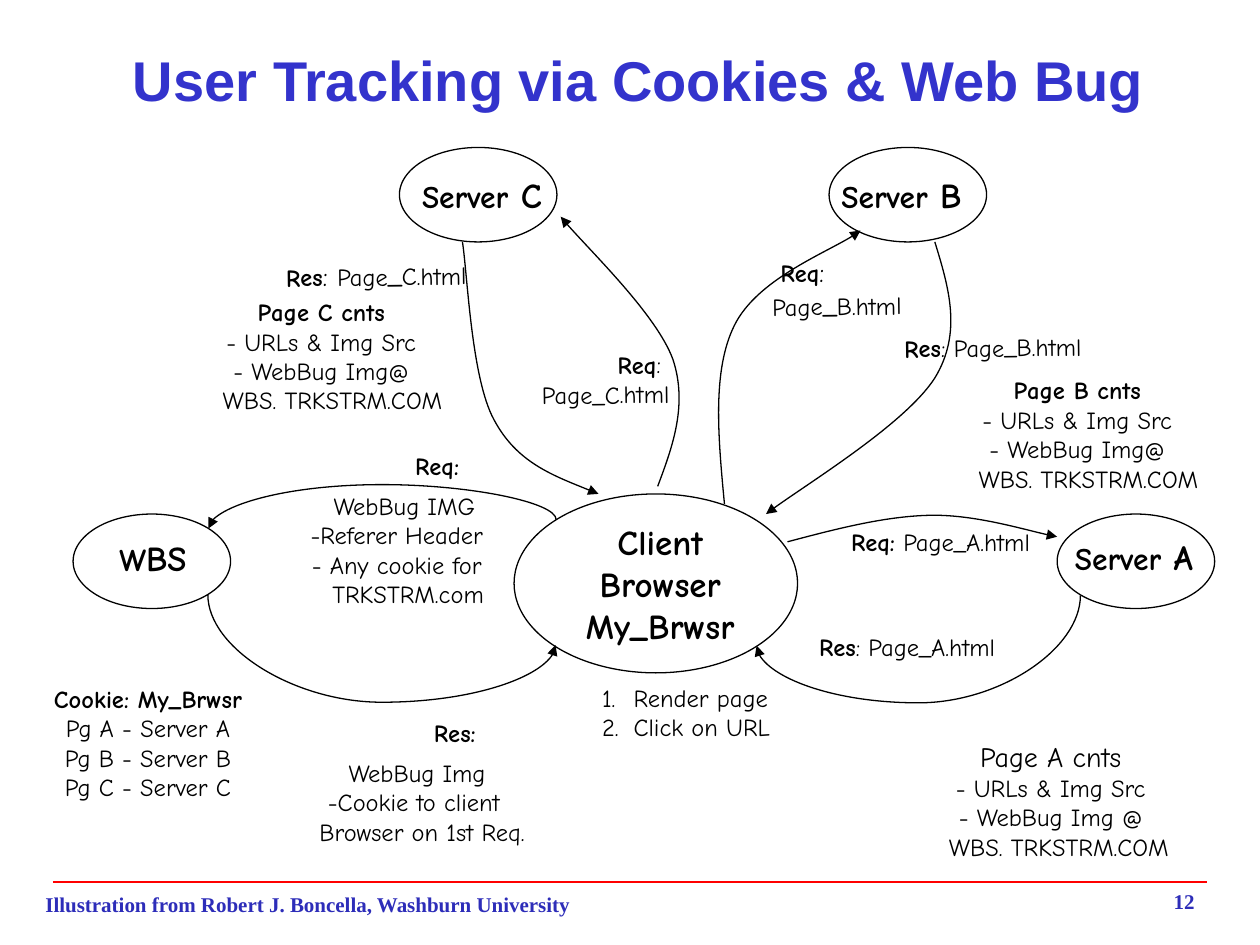
from lxml import etree
from pptx import Presentation
from pptx.dml.color import RGBColor
from pptx.enum.shapes import MSO_CONNECTOR, MSO_SHAPE
from pptx.enum.text import MSO_ANCHOR, PP_ALIGN
from pptx.oxml.ns import qn
from pptx.util import Cm, Pt

BLACK = RGBColor(0x00, 0x00, 0x00)
RED = RGBColor(0xFF, 0x00, 0x00)
BLUE = RGBColor(0x33, 0x33, 0xCC)
NAVY = RGBColor(0x2D, 0x2D, 0xB9)
LEFT, MID, RIGHT = PP_ALIGN.LEFT, PP_ALIGN.CENTER, PP_ALIGN.RIGHT
CURVE, STRAIGHT = MSO_CONNECTOR.CURVE, MSO_CONNECTOR.STRAIGHT
OVAL = MSO_SHAPE.OVAL
HAND, SERIF, SANS = "Comic Neue", "Times New Roman", "Arial"


def cm(*vals):
    """Turn grid units of 2.54 cm into lengths."""
    return [Cm(2.54 * v) for v in vals]


def text(slide, box, lines, size=14, bold=False, font=HAND, color=BLACK,
         align=MID, shift=None, gap=0, wrap=False, turn=0):
    """Lines are strings or lists of (text, bold, size) runs.

    shift maps a line number to its left margin; gap follows the first line.
    """
    shape = slide.shapes.add_textbox(*cm(*box))
    shape.rotation = turn
    frame = shape.text_frame
    frame.word_wrap = wrap or bool(shift)
    for i, line in enumerate(lines):
        para = frame.paragraphs[0] if i == 0 else frame.add_paragraph()
        para.alignment = align
        para.font.name = font
        para.font.size = Pt(size)
        para.font.bold = bold
        para.font.color.rgb = color
        if i == 1 and gap:
            para.space_before = Pt(gap)
        if shift and i in shift:
            para._p.get_or_add_pPr().set("marL", str(cm(shift[i])[0]))
        for words, heavy, pts in [(line, bold, size)] if isinstance(line, str) else line:
            run = para.add_run()
            run.text = words
            run.font.name = font
            run.font.size = Pt(pts)
            run.font.bold = heavy
            run.font.color.rgb = color
    return shape


def stroke(shape, color=BLACK, width=0.75, tip=None):
    """Set the line; tip is headEnd or tailEnd."""
    shape.line.color.rgb = color
    shape.line.width = Pt(width)
    props = shape.element.spPr
    if tip:
        etree.SubElement(props.find(qn("a:ln")), qn("a:" + tip), type="triangle")
    if props.find(qn("a:effectLst")) is None:
        etree.SubElement(props, qn("a:effectLst"))


def oval(slide, box):
    shape = slide.shapes.add_shape(OVAL, *cm(*box))
    shape.shadow.inherit = False
    shape.fill.background()
    stroke(shape)


def server(slide, x, y, label, dx, dy, wide, small="Server", pts=20):
    """Oval at x, y with a label set off by dx, dy."""
    oval(slide, (x, y, 1.25, 0.75))
    text(slide, (x + dx, y + dy, wide, 0.43),
         [[(small, True, 18), (label, True, pts)]])


def bend(slide, points, tip="tailEnd"):
    """Draw cubic curves through a start and triples of control points."""
    spots = [cm(*p) for p in points]
    build = slide.shapes.build_freeform(*spots[0])
    build.add_line_segments(spots[1:], close=False)
    shape = build.convert_to_shape()
    shape.shadow.inherit = False
    shape.fill.background()
    stroke(shape, tip=tip)
    steps = list(shape.element.iter(qn("a:lnTo")))
    for i in range(0, len(steps), 3):
        cubic = etree.Element(qn("a:cubicBezTo"))
        steps[i].addprevious(cubic)
        for step in steps[i:i + 3]:
            cubic.append(step[0])
            step.getparent().remove(step)


def arc(slide, box, turn, adj, tip="tailEnd", flip=True):
    """Curved connector in an unturned box, then turned by degrees."""
    x, y, w, h = box
    ends = (x + w, y + h, x, y) if flip else (x + w, y, x, y + h)
    line = slide.shapes.add_connector(CURVE, *cm(*ends))
    stroke(line, tip=tip)
    props = line.element.spPr
    props.find(qn("a:xfrm")).set("rot", str(turn * 60000))
    guides = next(props.iter(qn("a:avLst")))
    etree.SubElement(guides, qn("a:gd"), name="adj1", fmla=f"val {round(adj * 100000)}")


def page(slide, x, y, name, last, bug="- WebBug Img@", size=14, bold=True):
    """Contents list of one page."""
    text(slide, (x, y, 2.36, 1.03),
         [[(f"Page {name} cnts", bold, size)], "- URLs & Img Src", bug,
          "WBS. TRKSTRM.COM"], shift={3: last})


def frame(slide):
    title = text(slide, (0.57, 0.29, 9, 0.67), ["User Tracking via Cookies & Web Bug"],
                 32, True, SANS, BLUE, wrap=True)
    title.text_frame.vertical_anchor = MSO_ANCHOR.MIDDLE
    rule = slide.shapes.add_connector(STRAIGHT, *cm(0.42, 7, 9.58, 7))
    stroke(rule, RED, 1)
    text(slide, (7.5, 7, 2.08, 0.33), ["12"], 12, True, SERIF, NAVY, RIGHT, wrap=True)
    text(slide, (0.24, 7.03, 4.41, 0.3),
         ["Illustration from Robert J. Boncella, Washburn University"],
         12, True, SERIF, NAVY)


def client(slide):
    oval(slide, (4.08, 3.92, 2.25, 1.42))
    text(slide, (4.47, 4.08, 1.54, 1.1), ["Client", "Browser", "My_Brwsr"], 20, True)
    steps = text(slide, (4.68, 5.37, 1.7, 0.57), ["Render page", "Click on URL"],
                 align=LEFT, shift={0: 0.25, 1: 0.25})
    for para in steps.text_frame.paragraphs:
        props = para._p.get_or_add_pPr()
        props.set("indent", str(-cm(0.25)[0]))
        mark = etree.Element(qn("a:buAutoNum"), type="arabicPeriod")
        props.find(qn("a:defRPr")).addprevious(mark)


def site_a(slide):
    server(slide, 8.39, 4.08, " A", -0.06, 0.12, 1.34)
    bend(slide, [(6.25, 4.3), (6.63, 4.2), (7.01, 4.1), (7.37, 4.09),
                 (7.72, 4.08), (8.22, 4.23), (8.39, 4.26)])
    text(slide, (6.56, 4.13, 1.81, 0.33), [[("Req:", True, 14), (" Page_A.html", False, 14)]])
    arc(slide, (7.09, 3.64, 0.4, 2.57), 90, -1.134, "headEnd")
    text(slide, (6.31, 4.97, 1.78, 0.33), [[("Res", True, 14), (": Page_A.html", False, 14)]])
    page(slide, 7.16, 5.82, "A", 0.13, "- WebBug Img @", 16, False)


def site_b(slide):
    server(slide, 6.58, 1.17, " B", -0.08, 0.16, 1.31)
    bend(slide, [(5.75, 4), (5.7, 3.47), (5.65, 2.94), (5.83, 2.58),
                 (6.01, 2.22), (6.67, 1.96), (6.83, 1.83)])
    text(slide, (5.37, 1.97, 2, 0.64),
         [[("Req", True, 14), (":", False, 16)],
          [("Page", False, 14), ("_", False, 16), ("B.html", False, 14)]],
         shift={1: 0.54}, turn=359.3)
    bend(slide, [(7.42, 1.92), (7.53, 2.28), (7.64, 2.64), (7.42, 3),
                 (7.19, 3.36), (6.31, 3.9), (6.08, 4.08)])
    text(slide, (7, 2.59, 1.76, 0.33),
         [[("Res", True, 14), (": Page_B.html", False, 14)]], turn=359.3)
    page(slide, 7.37, 2.93, "B", 0.18)


def site_c(slide):
    server(slide, 3.17, 1.17, " C", 0, 0.16, 1.31)
    bend(slide, [(4.75, 3.92), (4.43, 3.79), (4.1, 3.67), (3.92, 3.33),
                 (3.74, 3), (3.71, 2.17), (3.67, 1.92)], "headEnd")
    text(slide, (2.02, 2, 1.78, 0.37),
         [[("Res", True, 14), (": ", False, 16), ("Page", False, 14),
           ("_", False, 16), ("C.html", False, 14)]], align=RIGHT, turn=359.3)
    bend(slide, [(5.22, 3.86), (5.34, 3.54), (5.46, 3.21), (5.34, 2.85),
                 (5.21, 2.5), (4.61, 1.92), (4.45, 1.72)])
    text(slide, (4.1, 2.73, 1.31, 0.57),
         [[("Req", True, 14), (": ", False, 14)], "Page_C.html"], align=RIGHT, turn=359.3)
    page(slide, 1.37, 2.31, "C", 0.18)


def tracker(slide):
    server(slide, 0.58, 4.08, "BS", 0.22, 0.13, 0.83, "W")
    arc(slide, (3, 2.78, 0.07, 2.76), 270, -3.975)
    text(slide, (2.1, 3.53, 2.1, 1.35),
         [[("Req:", True, 14)], "WebBug IMG", "-Referer Header",
          "- Any cookie for", "TRKSTRM.com"],
         shift={0: 0.64, 1: 0.12, 4: 0.18}, gap=6)
    arc(slide, (2.83, 3.54, 0.4, 2.76), 270, 2.134, flip=False)
    text(slide, (2.24, 5.65, 2.09, 1.11),
         [[("Res:", True, 14)], "WebBug Img", "-Cookie to client", "Browser on 1st Req."],
         shift={0: 0.65, 1: 0.05, 3: 0.13}, gap=6)
    text(slide, (0.13, 5.38, 2.09, 1.03),
         [[("Cookie: My_Brwsr", True, 14)], "Pg A - Server A",
          "Pg B - Server B", "Pg C - Server C"], wrap=True)


def main():
    deck = Presentation()
    deck.slide_width, deck.slide_height = cm(10, 7.5)
    slide = deck.slides.add_slide(deck.slide_layouts[6])
    for part in (frame, client, site_a, site_b, site_c, tracker):
        part(slide)
    deck.save("out.pptx")


if __name__ == "__main__":
    main()
